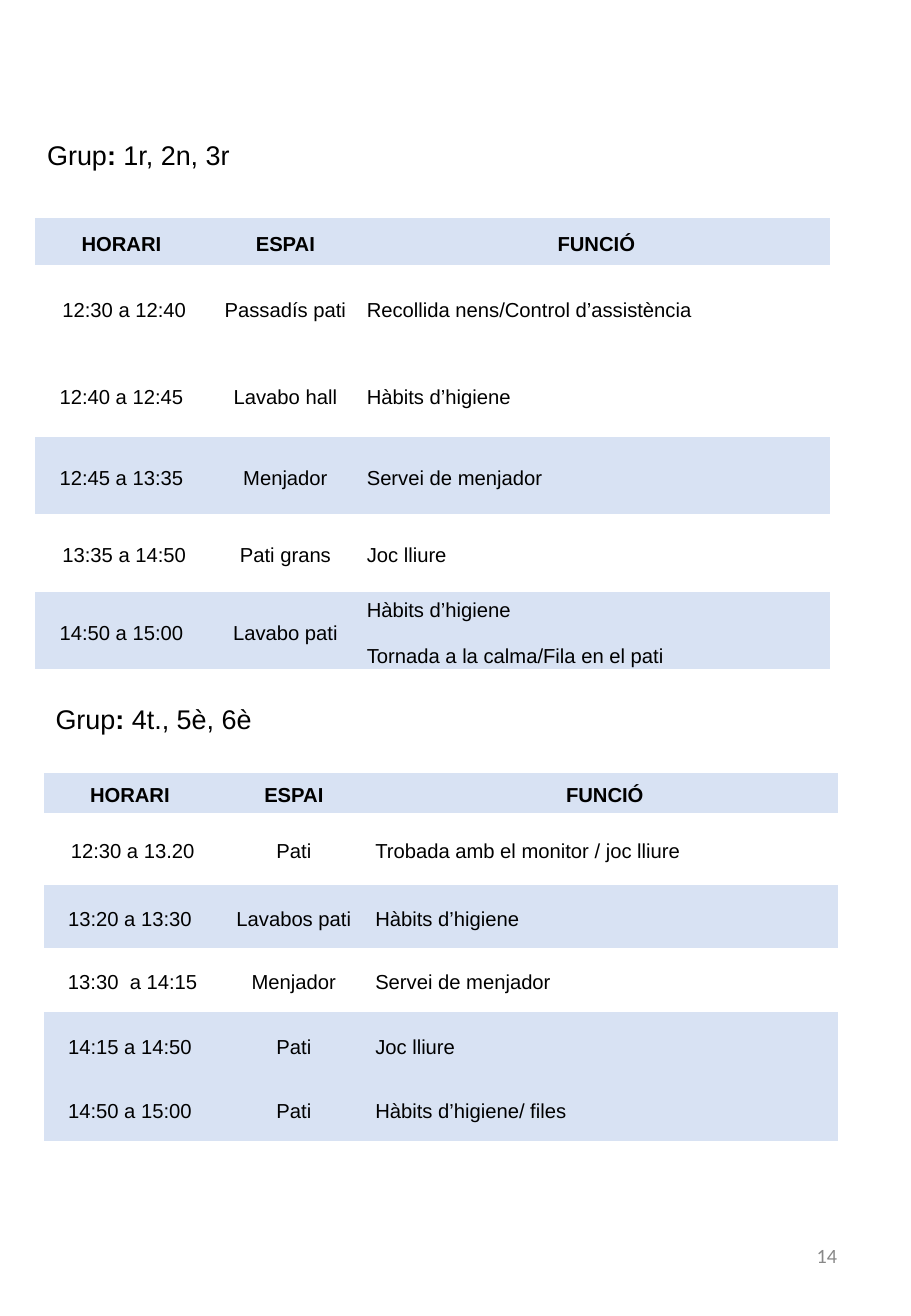
from pptx import Presentation
from pptx.dml.color import RGBColor
from pptx.enum.text import MSO_ANCHOR, PP_ALIGN
from pptx.util import Inches, Pt

MIDDLE = MSO_ANCHOR.MIDDLE
LEFT, CENTER, RIGHT = PP_ALIGN.LEFT, PP_ALIGN.CENTER, PP_ALIGN.RIGHT
PLAIN_STYLE = "{2D5ABB26-0587-4C30-8999-92F81FD0307C}"
BAND, BLACK, GREY = "D8E2F3", "000000", "888888"

HEADS = ("HORARI", "ESPAI", "FUNCIÓ")
WIDTHS = (1.42, 1.28, 3.84)
# Each row: height, banded, time, place, task
GROUPS = [
    {"names": "1r, 2n, 3r", "left": 0.29, "head_top": 1.09, "table_top": 1.79,
     "rows": [
         (0.39, True, *HEADS),
         (0.71, False, " 12:30 a 12:40", "Passadís pati",
          "Recollida nens/Control d’assistència"),
         (0.71, False, "12:40 a 12:45", "Lavabo hall", "Hàbits d’higiene"),
         (0.63, True, "12:45 a 13:35", "Menjador", "Servei de menjador"),
         (0.64, False, " 13:35 a 14:50", "Pati grans", "Joc lliure"),
         (0.63, True, "14:50 a 15:00", "Lavabo pati",
          "Hàbits d’higiene\nTornada a la calma/Fila en el pati"),
     ]},
    {"names": "4t., 5è, 6è", "left": 0.36, "head_top": 5.73, "table_top": 6.36,
     "rows": [
         (0.33, True, *HEADS),
         (0.59, False, " 12:30 a 13.20", "Pati",
          "Trobada amb el monitor / joc lliure"),
         (0.52, True, "13:20 a 13:30", "Lavabos pati", "Hàbits d’higiene"),
         (0.53, False, " 13:30  a 14:15", "Menjador", "Servei de menjador"),
         (0.53, True, "14:15 a 14:50", "Pati", "Joc lliure"),
         (0.53, True, "14:50 a 15:00", "Pati", "Hàbits d’higiene/ files"),
     ]},
]


def color(code):
    return RGBColor.from_string(code)


def style(run, size, code=BLACK, bold=False, face="Arial"):
    font = run.font
    font.name, font.size, font.bold = face, Pt(size), bold
    font.color.rgb = color(code)


def add_box(slide, left, top, width, height):
    box = slide.shapes.add_textbox(*map(Inches, (left, top, width, height)))
    box.text_frame.word_wrap = True
    return box.text_frame


def add_head(slide, group):
    para = add_box(slide, group["left"], group["head_top"], 3.67, 0.67).paragraphs[0]
    for text, bold in (("Grup", False), (": ", True), (group["names"], False)):
        run = para.add_run()
        run.text = text
        style(run, 16, bold=bold)


def fill_cell(cell, text, banded, align, bold):
    cell.vertical_anchor = MIDDLE
    cell.margin_left = cell.margin_right = Inches(0.03)
    cell.margin_top = cell.margin_bottom = 0
    if banded:
        cell.fill.solid()
        cell.fill.fore_color.rgb = color(BAND)
    else:
        cell.fill.background()
    cell.text_frame.text = text
    for i, para in enumerate(cell.text_frame.paragraphs):
        para.alignment, para.line_spacing = align, 1.25
        if i:
            para.space_before = Pt(10)
        style(para.runs[0], 12, bold=bold)


def add_plan(slide, group):
    """Add the timetable of one group."""
    rows = group["rows"]
    size = sum(WIDTHS), sum(row[0] for row in rows)
    frame = slide.shapes.add_table(
        len(rows), len(WIDTHS),
        *map(Inches, (group["left"], group["table_top"], *size)))
    table = frame.table
    table.horz_banding = False
    table._tbl.tblPr[0].text = PLAIN_STYLE
    for column, width in zip(table.columns, WIDTHS):
        column.width = Inches(width)
    for r, (height, banded, *texts) in enumerate(rows):
        table.rows[r].height = Inches(height)
        for c, text in enumerate(texts):
            align = LEFT if r and c == 2 else CENTER
            fill_cell(table.cell(r, c), text, banded, align, r == 0)


def add_number(slide, text):
    frame = add_box(slide, 5.3, 10.04, 1.69, 0.58)
    frame.vertical_anchor = MIDDLE
    frame.text = text
    para = frame.paragraphs[0]
    para.alignment = RIGHT
    style(para.runs[0], 12, GREY, face="Calibri")


def main():
    deck = Presentation()
    deck.slide_width, deck.slide_height = Inches(7.5), Inches(10.83)
    slide = deck.slides.add_slide(deck.slide_layouts[6])
    for group in GROUPS:
        add_head(slide, group)
        add_plan(slide, group)
    add_number(slide, "14")
    deck.save("out.pptx")


if __name__ == "__main__":
    main()
